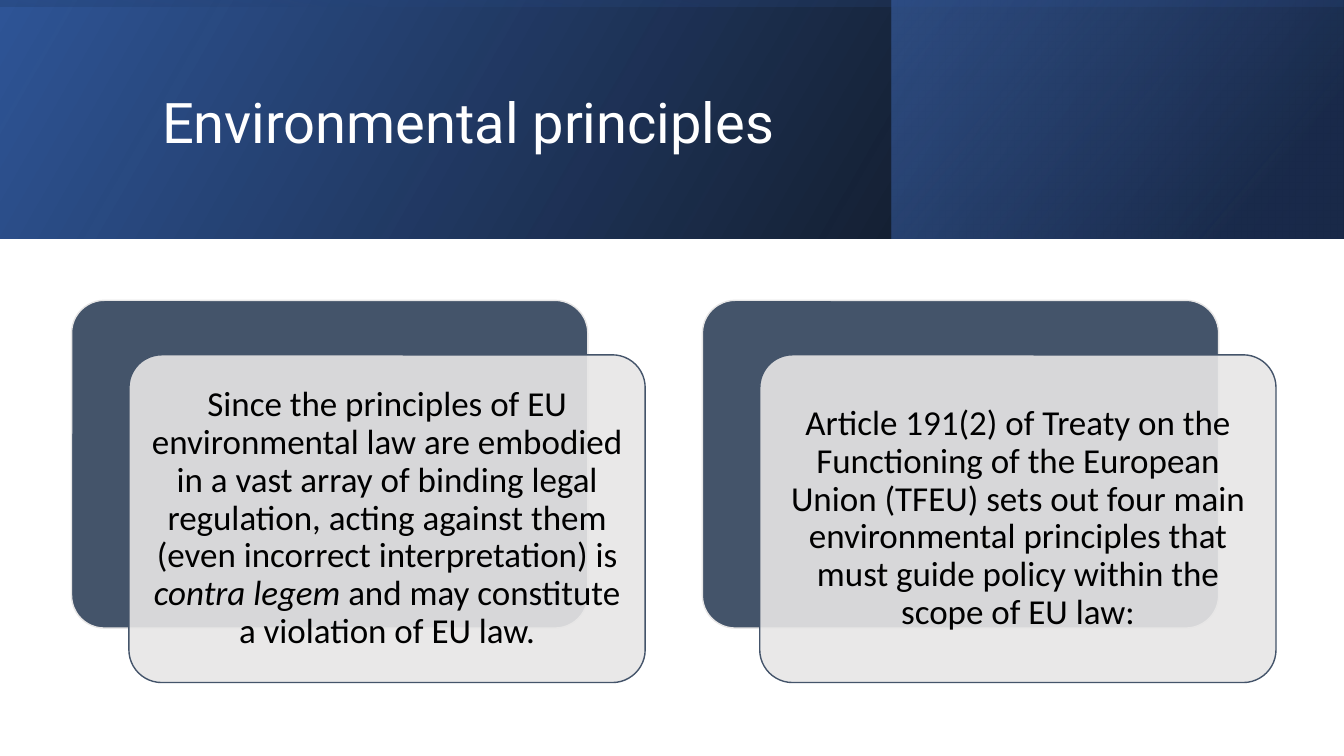
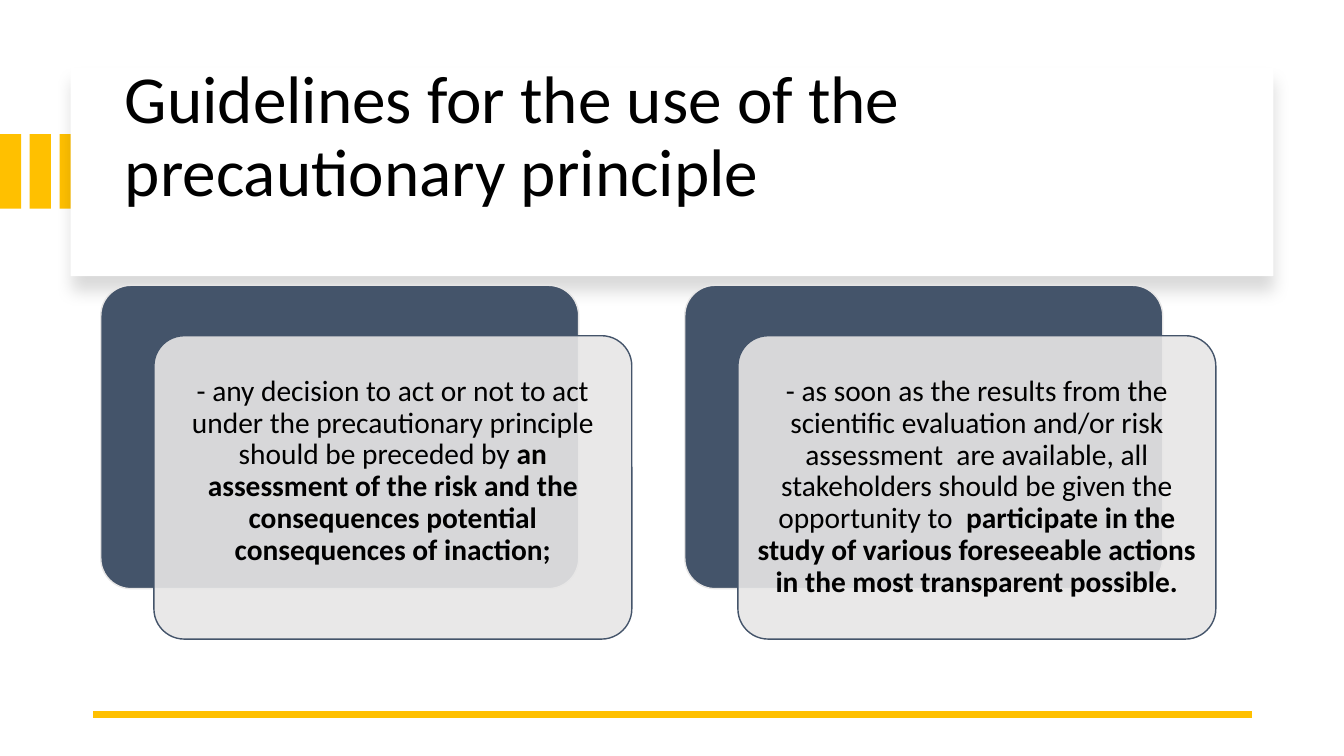
from dataclasses import dataclass

from lxml import etree
from pptx import Presentation
from pptx.dml.color import RGBColor
from pptx.enum import shapes, text
from pptx.oxml.ns import qn
from pptx.util import Inches, Pt


@dataclass(frozen=True)
class Theme:
    white: str = "FFFFFF"
    black: str = "000000"
    slate: str = "44546A"
    mist: str = "E7E6E6"
    gold: str = "FFC000"
    blue: str = "2F5597"
    navy: str = "203864"
    bright_blue: str = "4472C4"
    body_font: str = "Calibri"
    banner_font: str = "Roboto"
    banner_title_size: int = 40
    panel_title_size: int = 48
    large_card_size: int = 25
    small_card_size: int = 21
    line_spacing: float = 0.9


THEME = Theme()
SLIDE_WIDTH = 13.33
RECTANGLE = shapes.MSO_SHAPE.RECTANGLE
ROUNDED = shapes.MSO_SHAPE.ROUNDED_RECTANGLE


def rgb(color):
    return RGBColor.from_string(color)


def set_opacity(color_element, percent):
    etree.SubElement(color_element, qn("a:alpha"), val=str(percent * 1000))


def add_block(slide, kind, left, top, width, height, fill=None, line=None):
    shape = slide.shapes.add_shape(
        kind, Inches(left), Inches(top), Inches(width), Inches(height))
    shape.shadow.inherit = False
    if fill:
        shape.fill.solid()
        shape.fill.fore_color.rgb = rgb(fill)
    if line:
        shape.line.color.rgb = rgb(line)
        shape.line.width = Pt(1)
    else:
        shape.line.fill.background()
    return shape


def add_gradient_band(slide, left, top, width, height, stops, angle, rotation=0):
    """Mirrored band; stops are (position, color, opacity), angle is clockwise."""
    band = add_block(slide, RECTANGLE, left, top, width, height)
    band.rotation = rotation
    band._element.spPr.xfrm.set("flipH", "1")
    band.fill.gradient()
    band.fill.gradient_angle = 360 - angle
    for stop, (position, color, _) in zip(band.fill.gradient_stops, stops):
        stop.position = position / 100
        stop.color.rgb = rgb(color)
    colors = band._element.spPr.iter(qn("a:srgbClr"))
    for color_element, (_, _, opacity) in zip(list(colors), stops):
        set_opacity(color_element, opacity)


def write_paragraph(frame, runs, font, size, color, alignment):
    """Fill the frame with one paragraph of (text, style) runs."""
    frame.word_wrap = True
    frame.vertical_anchor = text.MSO_ANCHOR.MIDDLE
    paragraph = frame.paragraphs[0]
    paragraph.alignment = alignment
    paragraph.line_spacing = THEME.line_spacing
    for words, style in runs:
        run = paragraph.add_run()
        run.text = words
        run.font.name = font
        run.font.size = Pt(size)
        run.font.color.rgb = rgb(color)
        run.font.bold = style == "bold"
        run.font.italic = style == "italic"


def add_title(slide, title, left, top, width, height, font, size, color):
    box = slide.shapes.add_textbox(
        Inches(left), Inches(top), Inches(width), Inches(height))
    write_paragraph(box.text_frame, [(title, "")], font, size, color,
                    text.PP_ALIGN.LEFT)


def add_card(slide, left, top, width, runs, size, space_below=0):
    """Dark card with a translucent text card set off down and to the right."""
    height = 0.635 * width
    shift = width / 9
    back = add_block(slide, ROUNDED, left, top, width, height,
                     THEME.slate, THEME.mist)
    front = add_block(slide, ROUNDED, left + shift, top + 0.95 * shift,
                      width, height, THEME.mist, THEME.slate)
    for card in (back, front):
        card.adjustments[0] = 0.1
    set_opacity(next(front._element.spPr.iter(qn("a:srgbClr"))), 90)
    frame = front.text_frame
    padding = Inches(0.02 * width)
    frame.margin_left = frame.margin_right = frame.margin_top = padding
    frame.margin_bottom = padding + Inches(space_below)
    write_paragraph(frame, runs, THEME.body_font, size, THEME.black,
                    text.PP_ALIGN.CENTER)


def add_soft_shadow(shape):
    effects = shape._element.spPr.find(qn("a:effectLst"))
    shadow = etree.SubElement(
        effects, qn("a:outerShdw"), blurRad=str(Pt(11)), dist=str(Pt(10)),
        dir=str(90 * 60000), algn="t", rotWithShape="0")
    set_opacity(etree.SubElement(shadow, qn("a:srgbClr"), val=THEME.black), 15)


def add_rule(slide, left, right, y):
    rule = slide.shapes.add_connector(
        shapes.MSO_CONNECTOR.STRAIGHT,
        Inches(right), Inches(y), Inches(left), Inches(y))
    rule.line.color.rgb = rgb(THEME.gold)
    rule.line.width = Pt(4.5)
    etree.SubElement(rule._element.spPr, qn("a:effectLst"))


def add_card_row(slide, left, top, width, size, cards):
    """Place cards, given as (runs, space below the text), at an even pitch."""
    for index, (runs, space_below) in enumerate(cards):
        add_card(slide, left + index * 1.222 * width, top, width, runs, size,
                 space_below)


def build_principles(slide):
    band_height = 2.37
    add_gradient_band(slide, 0, 0, SLIDE_WIDTH, band_height,
                      [(0, THEME.black, 96), (100, THEME.blue, 100)], 330)
    add_gradient_band(slide, 8.84, 0, 4.48, band_height,
                      [(19, THEME.navy, 68), (100, THEME.bright_blue, 48)], 320)
    offset = (SLIDE_WIDTH - band_height) / 2
    add_gradient_band(slide, offset, -offset, band_height, SLIDE_WIDTH,
                      [(23, THEME.blue, 16), (99, THEME.black, 45)], 350, 270)
    add_title(slide, "Environmental principles", 1.51, 0.38, 10.63, 1.72,
              THEME.banner_font, THEME.banner_title_size, THEME.white)
    add_card_row(slide, 0.71, 2.98, 5.12, THEME.large_card_size, [
        ([("Since the principles of EU environmental law are embodied in a "
           "vast array of binding legal regulation, acting against them "
           "(even incorrect interpretation) is ", ""),
          ("contra legem", "italic"),
          (" and may constitute a violation of EU law.", "")], 0),
        ([("Article 191(2) of Treaty on the Functioning of the European "
           "Union (TFEU) sets out four main environmental principles that "
           "must guide policy within the scope of EU law:", "")], 0),
    ])


def build_guidelines(slide):
    for index in range(3):
        add_block(slide, RECTANGLE, index * 0.295, 1.33, 0.21, 0.74, THEME.gold)
    panel = add_block(slide, RECTANGLE, 0.7, 0.67, 11.93, 2.07, THEME.white)
    add_soft_shadow(panel)
    add_title(slide, "Guidelines for the use of the precautionary principle",
              1.14, 0.52, 11.13, 1.7,
              THEME.body_font, THEME.panel_title_size, THEME.black)
    add_rule(slide, 0.92, 12.42, 7.09)
    add_card_row(slide, 1, 2.83, 4.74, THEME.small_card_size, [
        ([("- any decision to act or not to act under the precautionary "
           "principle should be preceded by ", ""),
          ("an assessment of the risk and the consequences potential "
           "consequences of inaction;", "bold")], 0.32),
        ([("- as soon as the results from the scientific evaluation and/or "
           "risk assessment  are available, all stakeholders should be "
           "given the opportunity to  ", ""),
          ("participate in the study of various foreseeable actions in the "
           "most transparent possible.", "bold")], 0),
    ])


def main():
    presentation = Presentation()
    presentation.slide_width = Inches(SLIDE_WIDTH)
    presentation.slide_height = Inches(7.5)
    blank_layout = presentation.slide_layouts[6]
    for build in (build_principles, build_guidelines):
        build(presentation.slides.add_slide(blank_layout))
    presentation.save("out.pptx")


if __name__ == "__main__":
    main()
